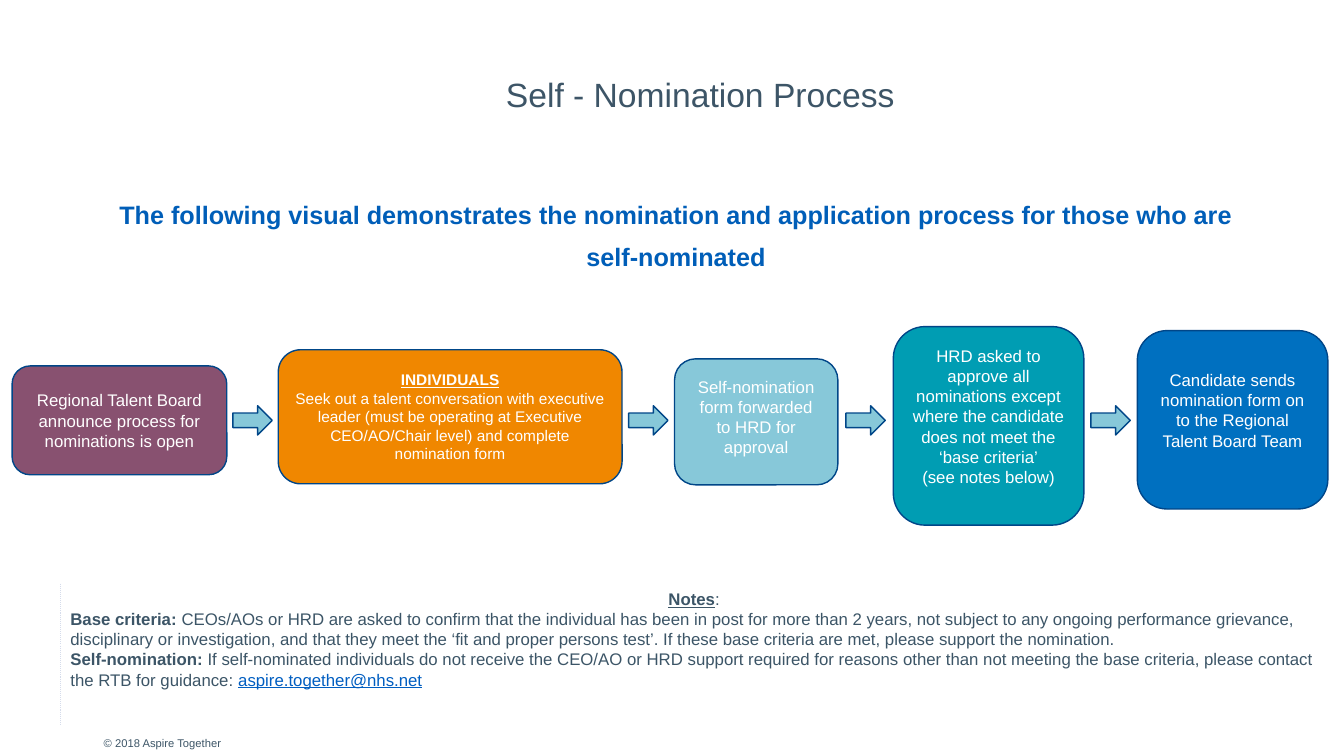
from pptx import Presentation
from pptx.dml.color import RGBColor
from pptx.enum.dml import MSO_LINE
from pptx.enum.shapes import MSO_CONNECTOR, MSO_SHAPE
from pptx.enum.text import MSO_ANCHOR, PP_ALIGN
from pptx.oxml.ns import qn
from pptx.util import Inches, Pt
from lxml import etree

ROUNDED, ARROW = MSO_SHAPE.ROUNDED_RECTANGLE, MSO_SHAPE.RIGHT_ARROW
STRAIGHT = MSO_CONNECTOR.STRAIGHT
LEFT, CENTER = PP_ALIGN.LEFT, PP_ALIGN.CENTER
TOP, MIDDLE = MSO_ANCHOR.TOP, MSO_ANCHOR.MIDDLE
DOTTED = MSO_LINE.ROUND_DOT
WIDTH, HEIGHT = 13.33, 7.5
SLATE, BLUE, NAVY, WHITE, SKY = "3D5567", "005EB8", "004688", "FFFFFF", "87C8D9"
FLOW_AXIS = 4.17
ARROW_WIDTH, ARROW_HEIGHT = 0.39, 0.29

STEPS = [
    (0.12, 3.63, 2.13, 1.08, "885170", 0, 12,
     ["Regional Talent Board announce process for nominations is open"]),
    (2.76, 3.47, 3.41, 1.33, "F08700", 0, 11,
     [[("INDIVIDUALS", {"bold": True, "underline": True})],
      "Seek out a talent conversation with executive leader (must be operating "
      "at Executive CEO/AO/Chair level) and complete nomination form"]),
    (6.69, 3.56, 1.62, 1.25, SKY, 0.1, 12,
     ["Self-nomination form forwarded to HRD for approval"]),
    (8.86, 3.24, 1.89, 1.97, "009DB3", 0.19, 12,
     ["HRD asked to approve all nominations except where the candidate does "
      "not meet the ‘base criteria’", "(see notes below)"]),
    (11.28, 3.28, 1.89, 1.77, "0070C0", 0.19, 12,
     ["Candidate sends nomination form on to the Regional Talent Board Team"]),
]

NOTES = [
    ("Base criteria: ",
     "CEOs/AOs or HRD are asked to confirm that the individual has been in post "
     "for more than 2 years, not subject to any ongoing performance grievance, "
     "disciplinary or investigation, and that they meet the ‘fit and proper "
     "persons test’. If these base criteria are met, please support the "
     "nomination.", ""),
    ("Self-nomination: ",
     "If self-nominated individuals do not receive the CEO/AO or HRD support "
     "required for reasons other than not meeting the base criteria, please "
     "contact the RTB for guidance: ", "aspire.together@nhs.net"),
]


def color(hex_code):
    return RGBColor.from_string(hex_code)


def write(frame, paragraphs, size=12, ink=SLATE, bold=False, align=LEFT,
          anchor=TOP, line_spacing=None, gap=0, raised=0):
    frame.word_wrap = True
    frame.vertical_anchor = anchor
    frame.margin_bottom = Inches(0.05 + raised)
    for index, runs in enumerate(paragraphs):
        paragraph = frame.add_paragraph() if index else frame.paragraphs[0]
        paragraph.alignment = align
        paragraph.line_spacing = line_spacing
        if index:
            paragraph.space_before = Pt(gap)
        for text, style in [(runs, {})] if isinstance(runs, str) else runs:
            run = paragraph.add_run()
            run.text = text
            run.font.name = "Arial"
            run.font.size = Pt(size)
            run.font.bold = style.get("bold", bold)
            run.font.underline = style.get("underline", False)
            run.font.color.rgb = color(style.get("ink", ink))


def text_box(slide, box, paragraphs, **style):
    frame = slide.shapes.add_textbox(*map(Inches, box)).text_frame
    write(frame, paragraphs, **style)
    return frame


def outlined(slide, kind, box, fill):
    shape = slide.shapes.add_shape(kind, *map(Inches, box))
    shape.shadow.inherit = False
    shape.fill.solid()
    shape.fill.fore_color.rgb = color(fill)
    shape.line.color.rgb = color(NAVY)
    shape.line.width = Pt(1)
    return shape


def heading(slide):
    text_box(slide, (4.92, 0.73, 4.38, 0.83), ["Self - Nomination Process"],
             size=24, line_spacing=0.9)
    text_box(slide, (0.37, 1.96, 12.67, 0.79),
             ["The following visual demonstrates the nomination and application "
              "process for those who are", "self-nominated"],
             size=18, ink=BLUE, bold=True, align=CENTER, line_spacing=0.9, gap=11)


def process(slide):
    for left, top, width, height, fill, raised, size, paragraphs in STEPS:
        card = outlined(slide, ROUNDED, (left, top, width, height), fill)
        write(card.text_frame, paragraphs, size=size, ink=WHITE, align=CENTER,
              anchor=MIDDLE, raised=raised)
    for before, after in zip(STEPS, STEPS[1:]):
        middle = (before[0] + before[2] + after[0]) / 2
        outlined(slide, ARROW, (middle - ARROW_WIDTH / 2,
                                FLOW_AXIS - ARROW_HEIGHT / 2,
                                ARROW_WIDTH, ARROW_HEIGHT), SKY)


def notes(slide, box):
    left, top, width, height = box
    margin_rule = slide.shapes.add_connector(
        STRAIGHT, *map(Inches, (left, top, left, top + height)))
    margin_rule.line.color.rgb = color("D5DCEB")
    margin_rule.line.width = Pt(0.75)
    margin_rule.line.dash_style = DOTTED
    etree.SubElement(margin_rule.line._get_or_add_ln().getparent(),
                     qn("a:effectLst"))
    paragraphs = [[("Notes", {"bold": True, "underline": True}), (":", {})]]
    for term, explanation, address in NOTES:
        runs = [(term, {"bold": True}), (explanation, {})]
        if address:
            runs.append((address, {"ink": "005EC1", "underline": True}))
        paragraphs.append(runs)
    frame = text_box(slide, box, paragraphs, ink="3C5567")
    frame.paragraphs[0].alignment = CENTER


def footer(slide):
    text_box(slide, (0.93, 7.26, 12.4, 0.24), ["© 2018 Aspire Together"], size=8)


def main():
    deck = Presentation()
    deck.slide_width, deck.slide_height = Inches(WIDTH), Inches(HEIGHT)
    slide = deck.slides.add_slide(deck.slide_layouts[6])
    heading(slide)
    process(slide)
    notes(slide, (0.6, 5.79, 12.57, 1.41))
    footer(slide)
    deck.save("out.pptx")


if __name__ == "__main__":
    main()
